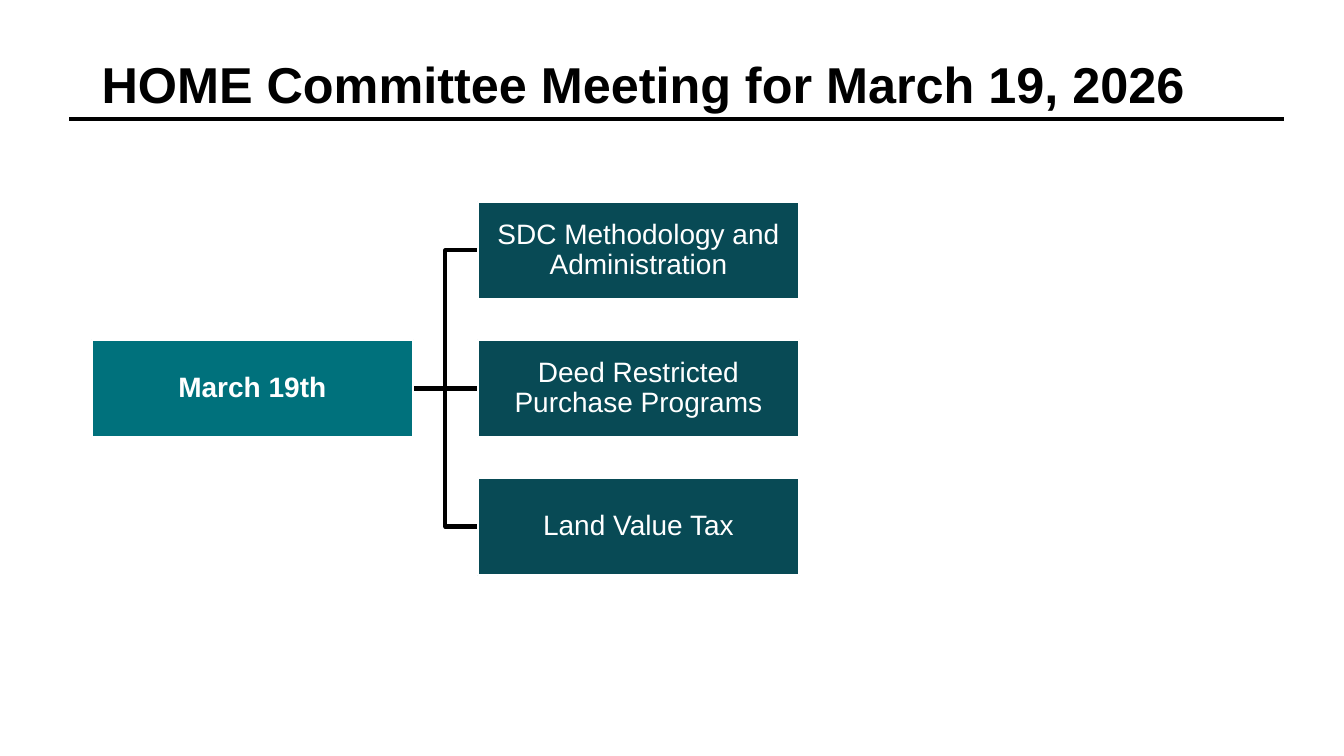
"""Build the committee meeting slide with its agenda tree."""
from dataclasses import dataclass
from typing import Any

from lxml import etree
from pptx import Presentation
from pptx import util as u
from pptx.dml.color import RGBColor
from pptx.enum import shapes, text
from pptx.oxml.ns import qn

BOX_WIDTH, BOX_HEIGHT = 8.1, 2.46
MEETING_LEFT, TOPIC_LEFT = 2.31, 12.04
FIRST_TOP, ROW_PITCH = 5.08, 3.48
TOPICS = [
    "SDC Methodology and Administration",
    "Deed Restricted Purchase Programs",
    "Land Value Tax",
]


@dataclass
class AgendaBox:
    label: str
    left: float
    row: int
    fill: str = "084A55"
    bold: bool = False


def color(value: str) -> RGBColor:
    return RGBColor.from_string(value)


def apply(target: Any, values: dict[str, Any]) -> None:
    for name, value in values.items():
        setattr(target, name, value)


def write(frame: Any, label: str, size: int, bold: bool, ink: str,
          alignment: Any, frame_format: dict[str, Any]) -> None:
    apply(frame, {"word_wrap": True, **frame_format})
    paragraph = frame.paragraphs[0]
    paragraph.text = label
    apply(paragraph, {"alignment": alignment, "line_spacing": 0.9})
    apply(paragraph.font, {"name": "Arial", "size": u.Pt(size), "bold": bold})
    paragraph.font.color.rgb = color(ink)


def draw_title(slide: Any, label: str) -> None:
    box = slide.shapes.add_textbox(u.Cm(2.31), u.Cm(1.37), u.Cm(29.21), u.Cm(1.65))
    write(box.text_frame, label, 36, True, "000000", text.PP_ALIGN.LEFT,
          {"vertical_anchor": text.MSO_ANCHOR.BOTTOM})


def draw_box(slide: Any, box: AgendaBox) -> Any:
    shape = slide.shapes.add_shape(
        shapes.MSO_SHAPE.RECTANGLE, u.Cm(box.left),
        u.Cm(FIRST_TOP + box.row * ROW_PITCH), u.Cm(BOX_WIDTH), u.Cm(BOX_HEIGHT))
    shape.shadow.inherit = False
    shape.fill.solid()
    shape.fill.fore_color.rgb = color(box.fill)
    shape.line.color.rgb = color("FFFFFF")
    shape.line.width = u.Pt(1.5)
    margins = {f"margin_{side}": u.Cm(0.03)
               for side in ("left", "right", "top", "bottom")}
    write(shape.text_frame, box.label, 20, box.bold, "FFFFFF", text.PP_ALIGN.CENTER,
          {"vertical_anchor": text.MSO_ANCHOR.MIDDLE, **margins})
    return shape


def draw_line(slide: Any, kind: Any, left: float = 0, right: float = 0,
              top: float = 0) -> Any:
    connector = slide.shapes.add_connector(
        kind, u.Cm(left), u.Cm(top), u.Cm(right), u.Cm(top))
    connector.line.color.rgb = color("000000")
    connector.line.width = u.Pt(3)
    etree.SubElement(connector.element.spPr, qn("a:effectLst"))
    return connector


def draw_branch(slide: Any, meeting: Any, topic: Any, straight: bool) -> None:
    kind = shapes.MSO_CONNECTOR.STRAIGHT if straight else shapes.MSO_CONNECTOR.ELBOW
    branch = draw_line(slide, kind)
    branch.begin_connect(meeting, 3)
    branch.end_connect(topic, 1)
    meeting.element.addprevious(branch.element)


def main() -> None:
    presentation = Presentation()
    apply(presentation, {"slide_width": u.Cm(33.87), "slide_height": u.Cm(19.05)})
    slide = presentation.slides.add_slide(presentation.slide_layouts[6])
    draw_line(slide, shapes.MSO_CONNECTOR.STRAIGHT, 1.75, 32.36, 3)
    draw_title(slide, "HOME Committee Meeting for March 19, 2026")
    middle_row = len(TOPICS) // 2
    meeting = draw_box(
        slide, AgendaBox("March 19th", MEETING_LEFT, middle_row, "00717C", True))
    for row, label in enumerate(TOPICS):
        topic = draw_box(slide, AgendaBox(label, TOPIC_LEFT, row))
        draw_branch(slide, meeting, topic, row == middle_row)
    presentation.save("out.pptx")


if __name__ == "__main__":
    main()
